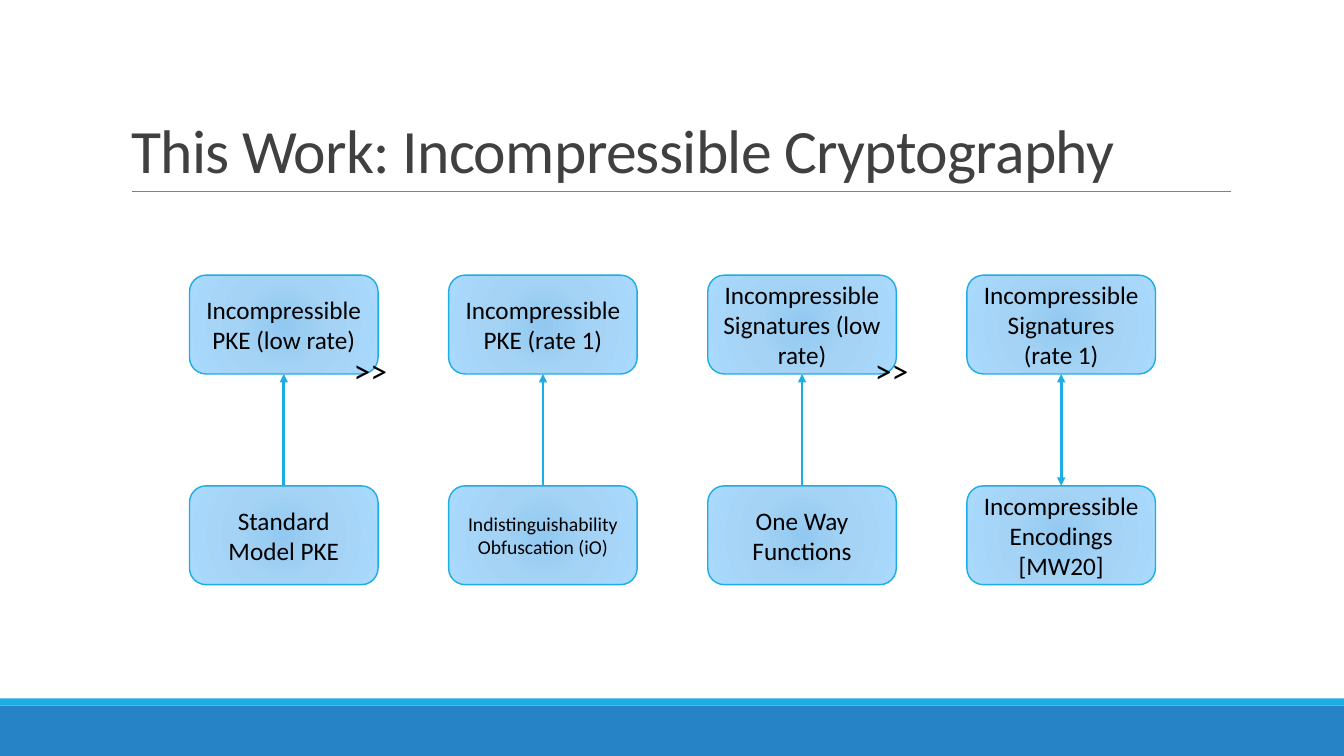
from pptx import Presentation
from pptx.dml.color import RGBColor
from pptx.enum.shapes import MSO_CONNECTOR as LINE, MSO_SHAPE as SHAPE
from pptx.enum.text import MSO_ANCHOR as ANCHOR, MSO_AUTO_SIZE as FIT, PP_ALIGN as ALIGN
from pptx.oxml import parse_xml
from pptx.oxml.ns import nsdecls, qn
from pptx.util import Inches, Pt

BLACK = RGBColor(0x00, 0x00, 0x00)
DARK = RGBColor(0x40, 0x40, 0x40)
GRAY = RGBColor(0x80, 0x80, 0x80)
BLUE = RGBColor(0x26, 0x83, 0xC6)
CYAN = RGBColor(0x1C, 0xAD, 0xE4)
GLOW = {0: RGBColor(0x92, 0xC9, 0xF0), 45: RGBColor(0xA4, 0xD3, 0xF5),
        100: RGBColor(0xA9, 0xD9, 0xFD)}
WIDE, HIGH = 13.33, 7.5
BOX_W, BOX_H = 1.87, 0.98
PAIRS = [
    ("Incompressible PKE (low rate)", "Standard Model PKE", 18, False),
    ("Incompressible PKE (rate 1)", "Indistinguishability Obfuscation (iO)", 14, False),
    ("Incompressible Signatures (low rate)", "One Way Functions", 18, False),
    ("Incompressible Signatures (rate 1)", "Incompressible Encodings [MW20]", 18, True),
]


def style(frame, size, color, align):
    """Format the only paragraph of a text frame."""
    para = frame.paragraphs[0]
    para.alignment = align
    font = para.runs[0].font
    font.name, font.size, font.color.rgb = "Calibri", Pt(size), color
    return para


def add_line(slide, start, end, color, width):
    """Draw a straight line without a shadow."""
    line = slide.shapes.add_connector(LINE.STRAIGHT, *map(Inches, start + end))
    line.line.color.rgb = color
    line.line.width = Pt(width)
    line._element.spPr.append(parse_xml(f"<a:effectLst {nsdecls('a')}/>"))
    return line


def add_band(slide, top, height, color):
    """Fill a strip across the whole slide."""
    band = slide.shapes.add_shape(
        SHAPE.RECTANGLE, 0, Inches(top), Inches(WIDE), Inches(height))
    band.shadow.inherit = False
    band.fill.solid()
    band.fill.fore_color.rgb = color
    band.line.fill.background()


def add_title(slide, left, top, width, height):
    """Set the title and the rule below it."""
    title = slide.shapes.title
    title.left, title.top = Inches(left), Inches(top)
    title.width, title.height = Inches(width), Inches(height)
    frame = title.text_frame
    frame.text = "This Work: Incompressible Cryptography"
    frame.auto_size = FIT.NONE
    frame.vertical_anchor = ANCHOR.BOTTOM
    para = style(frame, 44, DARK, ALIGN.LEFT)
    para.line_spacing = 0.85
    para.runs[0].font._element.set("spc", "-50")
    base = top + height
    add_line(slide, (left + 0.11, base), (left + width + 0.01, base), GRAY, 0.5)


def add_box(slide, left, top, text, size):
    """Draw a rounded box with a radial gradient."""
    box = slide.shapes.add_shape(
        SHAPE.ROUNDED_RECTANGLE, *map(Inches, (left, top, BOX_W, BOX_H)))
    box.shadow.inherit = False
    stops = "".join(f'<a:gs pos="{pos * 1000}"><a:srgbClr val="{color}"/></a:gs>'
                    for pos, color in GLOW.items())
    box._element.spPr.find(qn("a:prstGeom")).addnext(parse_xml(
        f'<a:gradFill {nsdecls("a")} rotWithShape="1"><a:gsLst>{stops}</a:gsLst>'
        '<a:path path="circle"><a:fillToRect l="100000" t="100000" r="100000" '
        'b="100000"/></a:path></a:gradFill>'))
    box.line.color.rgb = CYAN
    box.line.width = Pt(1)
    box.text_frame.text = text
    box.text_frame.vertical_anchor = ANCHOR.MIDDLE
    style(box.text_frame, size, BLACK, ALIGN.CENTER)
    return box


def add_arrow(slide, low, high, both):
    """Join the lower box to the upper one with an arrow."""
    arrow = add_line(slide, (0, 0), (1, 1), CYAN, 2)
    arrow.begin_connect(low, 0)
    arrow.end_connect(high, 2)
    for tag in ("headEnd", "tailEnd") if both else ("tailEnd",):
        arrow.line._get_or_add_ln().append(
            parse_xml(f'<a:{tag} {nsdecls("a")} type="triangle"/>'))


def add_mark(slide, left, top):
    """Place a much-greater sign."""
    mark = slide.shapes.add_textbox(*map(Inches, (left, top, 0.54, 0.5)))
    frame = mark.text_frame
    frame.text = ">>"
    frame.word_wrap = False
    frame.auto_size = FIT.SHAPE_TO_FIT_TEXT
    style(frame, 24, BLACK, ALIGN.LEFT)


def add_chain(slide, left, top, step, drop):
    """Lay out the columns of goals above their assumptions."""
    for col, (goal, base, size, both) in enumerate(PAIRS):
        x = left + col * step
        high = add_box(slide, x, top, goal, 18)
        low = add_box(slide, x, top + drop, base, size)
        add_arrow(slide, low, high, both)
    for shift in (1.53, 6.7):
        add_mark(slide, left + shift, top + 0.69)


def main():
    """Build and save the slide."""
    deck = Presentation()
    deck.slide_width, deck.slide_height = Inches(WIDE), Inches(HIGH)
    slide = deck.slides.add_slide(deck.slide_layouts[5])
    add_band(slide, 7, 0.5, BLUE)
    add_band(slide, 6.93, 0.07, CYAN)
    add_title(slide, 1.2, 0.31, 11, 1.59)
    add_chain(slide, 1.88, 2.73, 2.57, 2.09)
    deck.save("out.pptx")


if __name__ == "__main__":
    main()
